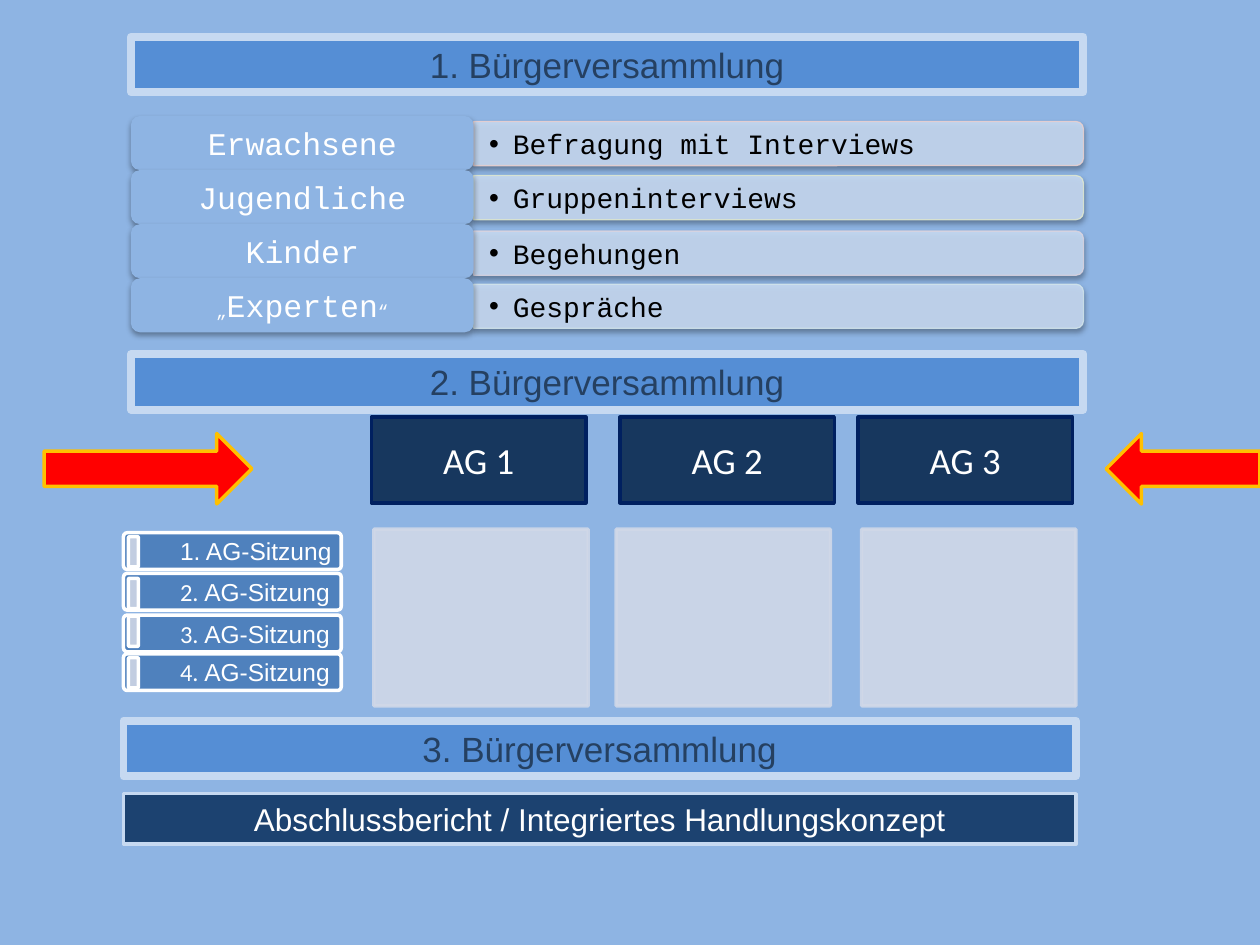
"""Build the slide on the course of the citizens' assemblies."""
from lxml import etree
from pptx import Presentation
from pptx.dml.color import RGBColor
from pptx.enum.shapes import MSO_SHAPE
from pptx.enum.text import MSO_ANCHOR, MSO_AUTO_SIZE, PP_ALIGN
from pptx.oxml.ns import qn
from pptx.util import Cm, Pt

RECTANGLE = MSO_SHAPE.RECTANGLE
ROUNDED = MSO_SHAPE.ROUNDED_RECTANGLE
ROUND_TOP = MSO_SHAPE.ROUND_2_SAME_RECTANGLE
ARROW = MSO_SHAPE.RIGHT_ARROW
LEFT, CENTER = PP_ALIGN.LEFT, PP_ALIGN.CENTER

COLORS = {
    "background": "8EB4E3", "banner": "558ED5", "banner_line": "C6D9F1",
    "banner_text": "254061", "bar": "C6D9F1", "session": "4F81BD",
    "marker": "C2CDE1", "group": "17375E", "group_line": "002060",
    "panel": "D0D8E8", "report": "1C4270", "arrow": "FF0000",
    "arrow_line": "FFC000", "white": "FFFFFF", "black": "000000",
}
AUDIENCES = [
    ([("Erwachsene", 18)], "Befragung mit Interviews", 2.45, "E8D0D0"),
    ([("Jugendliche", 18)], "Gruppeninterviews", 3.54, "DEE7D1"),
    ([("Kinder", 18)], "Begehungen", 4.66, "D8D3E0"),
    ([("„", 10), ("Experten", 18), ("“", 10)], "Gespräche", 5.73, "D0E3EA"),
]
SESSIONS = [
    ("Arial", 10.74, 10.82), ("Calibri", 11.56, 11.66),
    ("Calibri", 12.4, 12.42), ("Calibri", 13.18, 13.26),
]
GROUPS = [(7.49, 7.54), (12.5, 12.42), (17.3, 17.37)]


def rgb(name):
    """Return the colour of a name in COLORS or of a hex string."""
    return RGBColor.from_string(COLORS.get(name, name))


def paint(shape, fill, line=None, width=2.0):
    """Set the fill and outline of a shape."""
    shape.fill.solid()
    shape.fill.fore_color.rgb = rgb(fill)
    if line:
        shape.line.color.rgb = rgb(line)
        shape.line.width = Pt(width)
    else:
        shape.line.fill.background()


def add_box(slide, kind, box, fill, line=None, width=2.0):
    """Add a painted preset shape without a shadow."""
    shape = slide.shapes.add_shape(kind, *(Cm(length) for length in box))
    shape.shadow.inherit = False
    paint(shape, fill, line, width)
    return shape


def make_translucent(shape):
    """Give the fill and outline of a shape 90 percent opacity."""
    for color in shape._element.spPr.iter(qn("a:srgbClr")):
        etree.SubElement(color, qn("a:alpha"), val="90000")


def add_shadow(shape):
    """Add a soft black shadow below a shape."""
    effects = shape._element.spPr.find(qn("a:effectLst"))
    shadow = etree.SubElement(effects, qn("a:outerShdw"), blurRad="40000",
                              dist="23000", dir="5400000", rotWithShape="0")
    color = etree.SubElement(shadow, qn("a:srgbClr"), val=COLORS["black"])
    etree.SubElement(color, qn("a:alpha"), val="35000")


def write(shape, runs, color, alignment=CENTER, left=0.0):
    """Write runs of text, font and size as one middle-anchored paragraph."""
    frame = shape.text_frame
    frame.word_wrap = True
    frame.auto_size = MSO_AUTO_SIZE.NONE
    frame.vertical_anchor = MSO_ANCHOR.MIDDLE
    frame.margin_left = Cm(left)
    frame.margin_right = frame.margin_top = frame.margin_bottom = 0
    paragraph = frame.paragraphs[0]
    paragraph.alignment = alignment
    for text, font, size in runs:
        run = paragraph.add_run()
        run.text = text
        run.font.name = font
        run.font.size = Pt(size)
        run.font.color.rgb = rgb(color)
    return paragraph


def add_bullet(paragraph):
    """Give a paragraph a round bullet with a hanging indent."""
    properties = paragraph._p.get_or_add_pPr()
    properties.set("marL", str(Cm(0.48)))
    properties.set("indent", str(Cm(-0.48)))
    etree.SubElement(properties, qn("a:buFont"), typeface="Arial")
    etree.SubElement(properties, qn("a:buChar"), char="•")


def add_title(slide, text):
    """Turn the title placeholder into the first banner."""
    title = slide.shapes.title
    title.left, title.top, title.width, title.height = (
        Cm(2.64), Cm(0.74), Cm(19.2), Cm(1.12))
    paint(title, "banner", "banner_line", 4.5)
    write(title, [(text, "Arial", 20)], "banner_text")


def add_banner(slide, left, top, text):
    """Add the banner of a later assembly."""
    banner = add_box(slide, RECTANGLE, (left, top, 19.2, 1.12),
                     "banner", "banner_line", 4.5)
    write(banner, [(text, "Arial", 20)], "banner_text")


def add_audience(slide, index, label, method, top, line):
    """Add an audience label with the bar that names its method."""
    width, height = 12.29, 0.89
    offset = (width - height) / 2
    bar = add_box(slide, ROUND_TOP,
                  (9.55 + offset, top - offset, height, width), "bar", line, 0.75)
    bar.rotation = 90
    make_translucent(bar)
    add_shadow(bar)
    text_box = slide.shapes.add_textbox(Cm(9.55), Cm(top), Cm(width), Cm(height))
    add_bullet(write(text_box, [(method, "Courier New", 16)], "black", LEFT, 0.31))
    shape = add_box(slide, ROUNDED, (2.64, 2.34 + 1.09 * index, 6.91, 1.09),
                    "background")
    add_shadow(shape)
    write(shape, [(text, "Courier New", size) for text, size in label], "white")


def add_session(slide, number, font, top, marker_top):
    """Add a numbered session with its marker."""
    session = add_box(slide, ROUNDED, (2.49, top, 4.39, 0.74), "session", "white")
    runs = [(f"{number}. ", font, 14), ("AG-Sitzung", "Arial", 14)]
    write(session, runs, "white", LEFT, 1.12)
    marker = add_box(slide, ROUNDED, (2.59, marker_top, 0.2, 0.61),
                     "marker", "white")
    for shape in (session, marker):
        shape.adjustments[0] = 0.1


def add_group(slide, number, left, panel_left):
    """Add a working group heading and the panel below it."""
    heading = add_box(slide, RECTANGLE, (left, 8.41, 4.32, 1.73),
                      "group", "group_line")
    write(heading, [(f"AG {number}", "Calibri", 21)], "white")
    panel = add_box(slide, RECTANGLE, (panel_left, 10.67, 4.32, 3.56),
                    "panel", "panel")
    make_translucent(panel)


def add_arrow(slide, left, width, rotation=0):
    """Add a red block arrow beside the working groups."""
    arrow = add_box(slide, ARROW, (left, 8.74, width, 1.42), "arrow", "arrow_line")
    arrow.rotation = rotation


def main():
    """Build and save the presentation."""
    presentation = Presentation()
    presentation.slide_width, presentation.slide_height = Cm(25.4), Cm(19.05)
    slide = presentation.slides.add_slide(presentation.slide_layouts[5])
    slide.background.fill.solid()
    slide.background.fill.fore_color.rgb = rgb("background")
    add_title(slide, "1. Bürgerversammlung")
    for number, session in enumerate(SESSIONS, 1):
        add_session(slide, number, *session)
    for number, group in enumerate(GROUPS, 1):
        add_group(slide, number, *group)
    add_banner(slide, 2.64, 7.14, "2. Bürgerversammlung")
    add_banner(slide, 2.49, 14.53, "3. Bürgerversammlung")
    for index, audience in enumerate(AUDIENCES):
        add_audience(slide, index, *audience)
    report = add_box(slide, RECTANGLE, (2.49, 16, 19.2, 1.02),
                     "report", "banner_line")
    write(report, [("Abschlussbericht / Integriertes Handlungskonzept",
                    "Arial", 18)], "white")
    add_arrow(slide, 22.3, 3.1, 180)
    add_arrow(slide, 0.89, 4.19)
    presentation.save("out.pptx")


if __name__ == "__main__":
    main()
